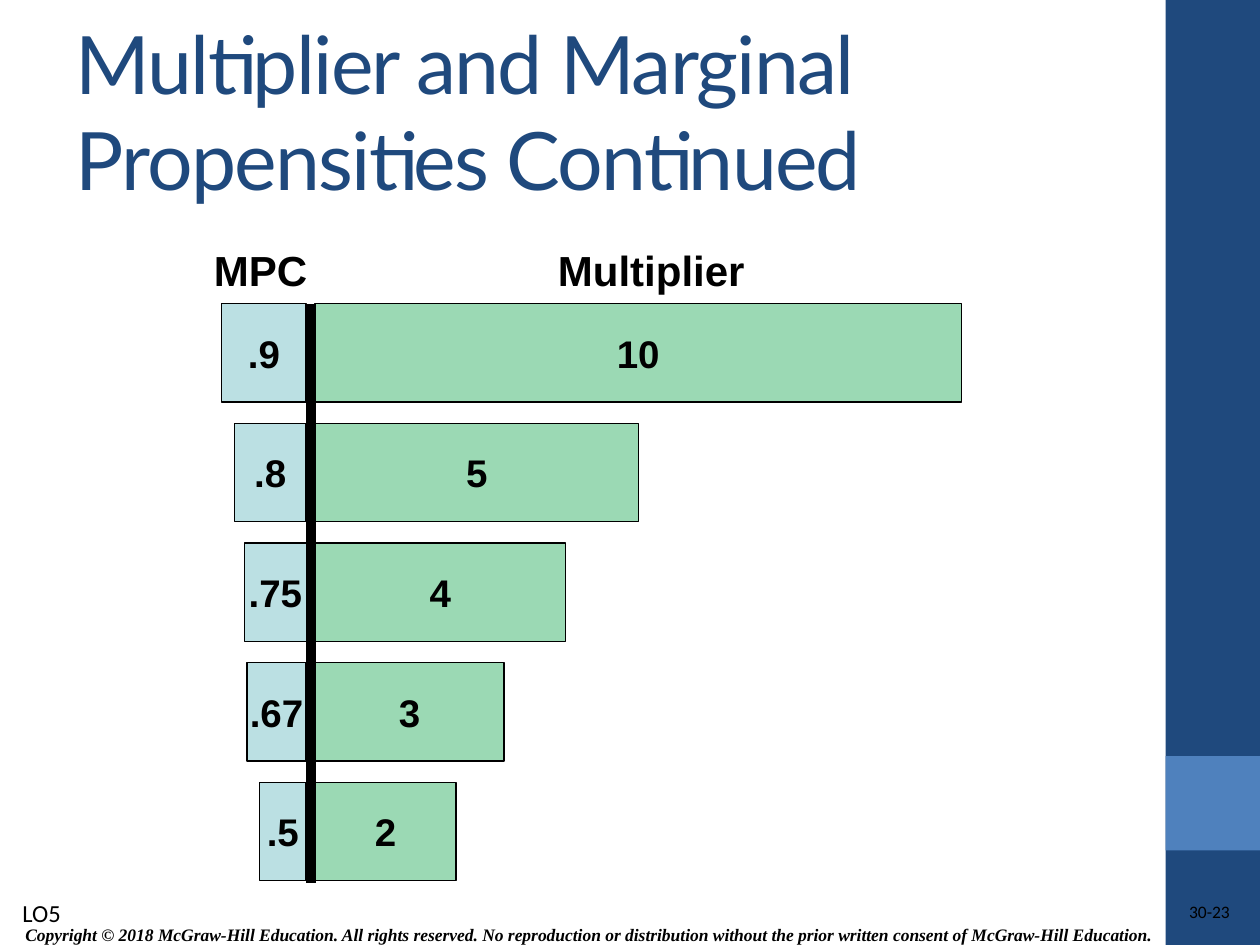
import pptx
import pptx.util
import pptx.dml.color
import pptx.enum.shapes
import pptx.enum.text
import pptx.oxml.ns
import lxml.etree

Inches = pptx.util.Inches
Pt = pptx.util.Pt
ALIGN = pptx.enum.text.PP_ALIGN
MIDDLE = pptx.enum.text.MSO_ANCHOR.MIDDLE
TOP = pptx.enum.text.MSO_ANCHOR.TOP
FIT = pptx.enum.text.MSO_AUTO_SIZE

NAVY, BLUE, BLACK = "1F497D", "4F81BD", "000000"
GREEN, AQUA = "9BD9B4", "BBE0E3"

# MPC, its bar width, multiplier, its bar width
ROWS = [
    (".9", 0.67, "10", 5.13),
    (".8", 0.57, "5", 2.57),
    (".75", 0.49, "4", 1.99),
    (".67", 0.47, "3", 1.5),
    (".5", 0.37, "2", 1.12),
]
FIRST, PITCH, HIGH = 2.41, 0.95, 0.78
MPC_END, MULT_START, AXIS = 2.43, 2.5, 2.47


def color(code):
    return pptx.dml.color.RGBColor.from_string(code)


class Page:
    """Style and the slide being drawn."""

    font = "Arial"

    def __init__(self, deck):
        self.slide = deck.slides.add_slide(deck.slide_layouts[5])
        self.shapes = self.slide.shapes

    def put(self, shape, text, size, font=None, tint=BLACK, bold=None,
            italic=None, align=ALIGN.LEFT, anchor=TOP, wrap=False):
        """Set and format the text of a shape."""
        frame = shape.text_frame
        frame.text = text
        frame.word_wrap = wrap
        frame.vertical_anchor = anchor
        para = frame.paragraphs[0]
        para.alignment = align
        para.font.name = font or self.font
        para.font.size = Pt(size)
        para.font.bold = bold
        para.font.italic = italic
        para.font.color.rgb = color(tint)
        return frame

    def title(self, text, *box):
        shape = self.shapes.title
        shape.left, shape.top, shape.width, shape.height = map(Inches, box)
        frame = self.put(shape, text, 46, "Lato", NAVY, anchor=MIDDLE,
                         wrap=True)
        frame.auto_size = FIT.NONE
        frame.paragraphs[0].runs[0]._r.get_or_add_rPr().set("spc", "-100")

    def label(self, text, box, size, **style):
        shape = self.shapes.add_textbox(*map(Inches, box))
        return self.put(shape, text, size, **style)

    def rect(self, box, fill):
        kind = pptx.enum.shapes.MSO_SHAPE.RECTANGLE
        shape = self.shapes.add_shape(kind, *map(Inches, box))
        shape.shadow.inherit = False
        shape.fill.solid()
        shape.fill.fore_color.rgb = color(fill)
        shape.line.fill.background()
        return shape

    def bar(self, text, box, fill):
        shape = self.rect(box, fill)
        shape.line.color.rgb = color(BLACK)
        shape.line.width = Pt(0.75)
        self.put(shape, text, 22, bold=True, align=ALIGN.CENTER,
                 anchor=MIDDLE)

    def line(self, ends, width):
        kind = pptx.enum.shapes.MSO_CONNECTOR.STRAIGHT
        line = self.shapes.add_connector(kind, *map(Inches, ends))
        line.line.color.rgb = color(BLACK)
        line.line.width = Pt(width)
        lxml.etree.SubElement(line._element.spPr,
                              pptx.oxml.ns.qn("a:effectLst"))


def main():
    deck = pptx.Presentation()
    deck.slide_width, deck.slide_height = Inches(10), Inches(7.5)
    page = Page(deck)

    page.rect((9.25, 0, 0.75, 7.5), NAVY)
    page.rect((9.25, 6, 0.75, 0.75), BLUE)
    page.label("Copyright © 2018 McGraw-Hill Education. All rights reserved. "
               "No reproduction or distribution without the prior written "
               "consent of McGraw-Hill Education.",
               (0.06, 7.28, 9.22, 0.28), 10, font="Times New Roman",
               bold=True, italic=True, align=ALIGN.CENTER, anchor=MIDDLE,
               wrap=True)
    number = page.label("30-23", (7.81, 7.15, 1.95, 0.2), 10, font="Calibri",
                        align=ALIGN.RIGHT, wrap=True)
    number.margin_left = number.margin_right = 0
    number.margin_top = number.margin_bottom = 0

    page.title("Multiplier and Marginal Propensities Continued",
               0.5, 0.25, 8.33, 1.25)

    for i, (mpc, small, mult, wide) in enumerate(ROWS):
        top = FIRST + i * PITCH
        page.bar(mult, (MULT_START, top, wide, HIGH), GREEN)
        page.bar(mpc, (MPC_END - small, top, small, HIGH), AQUA)

    for text, left, width in (("MPC", 1.6, 0.94), ("Multiplier", 4.33, 1.68)):
        head = page.label(text, (left, 1.89, width, 0.5), 24, bold=True)
        head.auto_size = FIT.SHAPE_TO_FIT_TEXT
    page.line((AXIS, 2.41, AXIS, 7.01), 6)
    page.label("LO5", (0.08, 7.08, 0.53, 0.34), 14, font="Calibri", wrap=True)

    deck.save("out.pptx")


if __name__ == "__main__":
    main()
